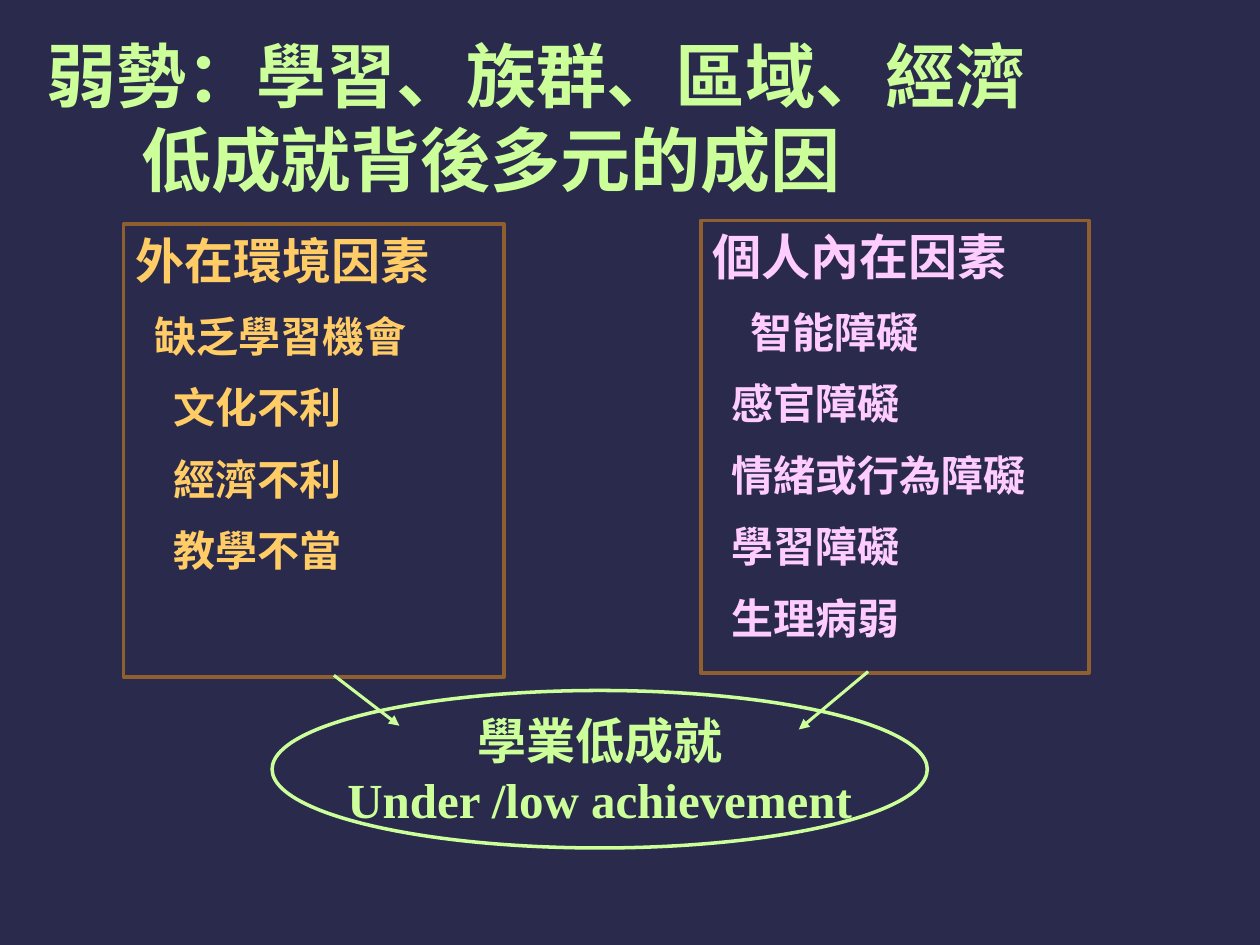
from lxml.etree import SubElement
from pptx import Presentation
from pptx.dml.color import RGBColor
from pptx.enum.shapes import MSO_CONNECTOR, MSO_SHAPE
from pptx.enum.text import MSO_ANCHOR, MSO_AUTO_SIZE, PP_ALIGN
from pptx.oxml.ns import qn
from pptx.util import Inches, Pt

NAVY = RGBColor(0x2A, 0x2B, 0x4C)
LIME = RGBColor(0xCC, 0xFF, 0x99)
BROWN = RGBColor(0x8F, 0x5F, 0x2F)
ORANGE = RGBColor(0xFF, 0xCC, 0x66)
PINK = RGBColor(0xFF, 0xCC, 0xFF)

CJK_FONT = "Noto Sans CJK SC"
LATIN_FONT = "Times New Roman"

# The slide is a grid of 100 columns by 75 rows
COLUMNS, ROWS = 100, 75
CELL = Inches(10) // COLUMNS
INDENT = 1.5  # one list indent, in columns


def cells(*counts):
    return [round(count * CELL) for count in counts]


def write(frame, text, size, color, font=CJK_FONT, indent=0, before=0,
          align=PP_ALIGN.LEFT):
    """Fill the first empty paragraph of the frame, or append one."""
    paragraph = frame.paragraphs[-1]
    if paragraph.runs:
        paragraph = frame.add_paragraph()
    paragraph.alignment = align
    paragraph.space_before = Pt(before)
    if indent:
        paragraph._p.get_or_add_pPr().set("marL", str(cells(indent)[0]))
    run = paragraph.add_run()
    run.text = text
    run.font.size = Pt(size)
    run.font.bold = True
    run.font.name = font
    run.font.color.rgb = color
    SubElement(run._r.get_or_add_rPr(), qn("a:ea"), typeface=CJK_FONT)


def add_title(slide, box):
    title = slide.shapes.title
    title.left, title.top, title.width, title.height = cells(*box)
    frame = title.text_frame
    frame.vertical_anchor = MSO_ANCHOR.TOP
    frame.auto_size = MSO_AUTO_SIZE.NONE
    write(frame, "弱勢：學習、族群、區域、經濟", 40, LIME)
    write(frame, "低成就背後多元的成因", 40, LIME, indent=5 * INDENT)


def add_outline(slide, kind, box, color, width):
    shape = slide.shapes.add_shape(kind, *cells(*box))
    shape.shadow.inherit = False
    shape.fill.background()
    shape.line.color.rgb = color
    shape.line.width = Pt(width)
    return shape


def add_factors(slide, box, heading, factors, color):
    """Draw a framed list; each factor is a text and its indent level."""
    frame = add_outline(slide, MSO_SHAPE.RECTANGLE, box, BROWN, 2.25).text_frame
    frame.word_wrap = True
    frame.vertical_anchor = MSO_ANCHOR.TOP
    write(frame, heading, 28, color, font=LATIN_FONT)
    for text, level in factors:
        write(frame, text, 24, color, indent=level * INDENT, before=12)


def add_outcome(slide, box):
    frame = add_outline(slide, MSO_SHAPE.OVAL, box, LIME, 2).text_frame
    frame.word_wrap = False
    frame.vertical_anchor = MSO_ANCHOR.MIDDLE
    for text in ("學業低成就", "Under /low achievement"):
        write(frame, text, 28, LIME, font=LATIN_FONT, align=PP_ALIGN.CENTER)


def add_arrow(slide, start, end):
    arrow = slide.shapes.add_connector(MSO_CONNECTOR.STRAIGHT,
                                       *cells(*start, *end))
    arrow.line.color.rgb = LIME
    arrow.line.width = Pt(1.75)
    SubElement(arrow.line._get_or_add_ln(), qn("a:tailEnd"), type="triangle")
    SubElement(arrow._element.spPr, qn("a:effectLst"))


def main():
    presentation = Presentation()
    presentation.slide_width = COLUMNS * CELL
    presentation.slide_height = ROWS * CELL
    slide = presentation.slides.add_slide(presentation.slide_layouts[5])
    slide.background.fill.solid()
    slide.background.fill.fore_color.rgb = NAVY

    add_title(slide, (2.7, 2.1, 94.5, 14.3))
    add_factors(slide, (9.8, 17.8, 30.2, 35.9), "外在環境因素",
                [("缺乏學習機會", 1), ("文化不利", 2), ("經濟不利", 2),
                 ("教學不當", 2)], ORANGE)
    add_factors(slide, (55.6, 17.5, 30.8, 35.9), "個人內在因素",
                [("智能障礙", 2), ("感官障礙", 1), ("情緒或行為障礙", 1),
                 ("學習障礙", 1), ("生理病弱", 1)], PINK)
    add_outcome(slide, (21.6, 54.8, 52, 12.5))
    add_arrow(slide, (26.5, 53.6), (31.7, 57.6))
    add_arrow(slide, (68.9, 53.3), (63.4, 57.9))
    presentation.save("out.pptx")


if __name__ == "__main__":
    main()
